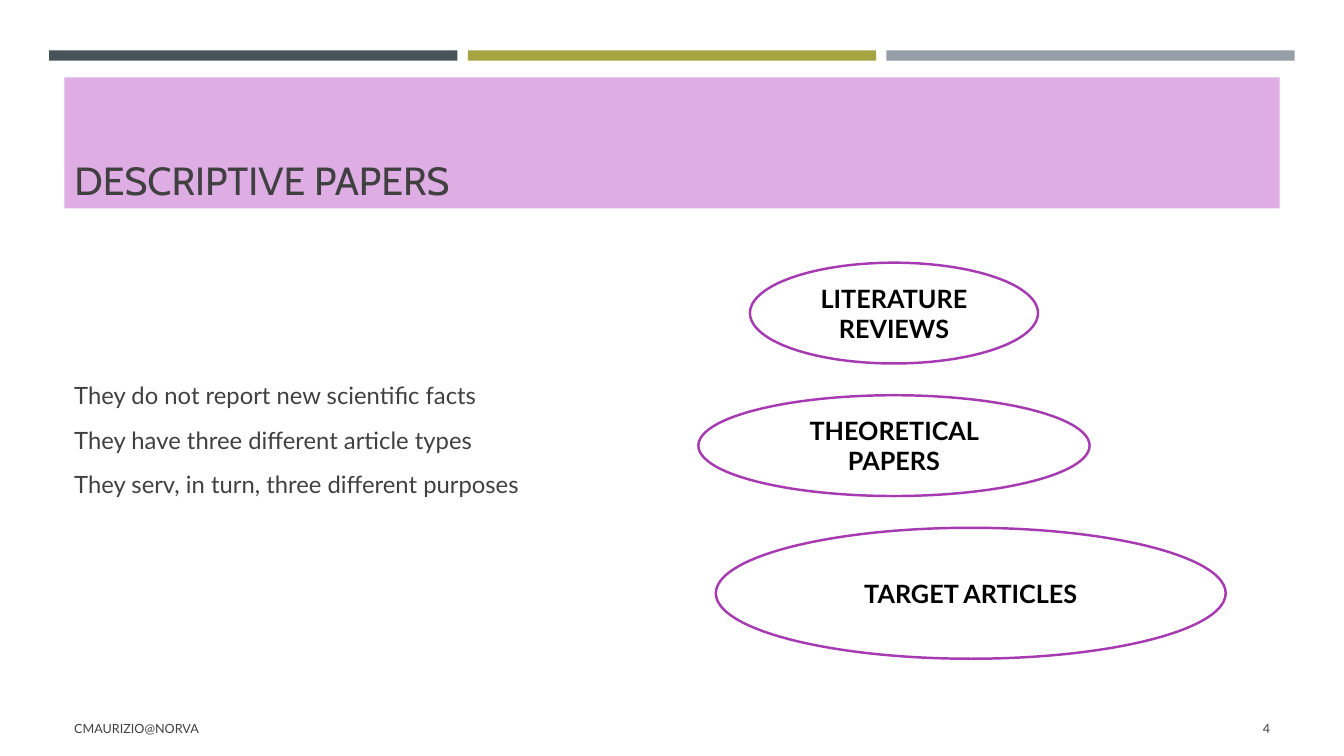
"""Build the slide that introduces descriptive papers and their three types."""
from pptx import Presentation
from pptx.dml.color import RGBColor
from pptx.enum.shapes import MSO_SHAPE
from pptx.enum.text import MSO_ANCHOR, MSO_AUTO_SIZE, PP_ALIGN
from pptx.util import Cm, Pt

SLATE = RGBColor(0x46, 0x53, 0x59)
OLIVE = RGBColor(0xA6, 0xA5, 0x41)
GREY = RGBColor(0x96, 0x9F, 0xA7)
LILAC = RGBColor(0xDE, 0xAD, 0xE4)
PURPLE = RGBColor(0xA6, 0x3B, 0xB1)
TEXT = RGBColor(0x40, 0x40, 0x40)
BLACK = RGBColor(0, 0, 0)
WHITE = RGBColor(0xFF, 0xFF, 0xFF)

MARGIN, CONTENT_W = 1.62, 30.63


def write(sp, lines, anchor, para, font, color):
    """Fill a shape with formatted paragraphs."""
    tf = sp.text_frame
    tf.word_wrap = True
    tf.auto_size = MSO_AUTO_SIZE.NONE
    tf.vertical_anchor = anchor
    tf.text = "\n".join(lines)
    for p in tf.paragraphs:
        for name, value in para.items():
            setattr(p, name, value)
        for r in p.runs:
            for name, value in font.items():
                setattr(r.font, name, value)
            r.font.color.rgb = color


def add_solid(kind, box, fill):
    """Add a plain filled shape without shadow or outline."""
    sp = s.shapes.add_shape(kind, *map(Cm, box))
    sp.shadow.inherit = False
    sp.fill.solid()
    sp.fill.fore_color.rgb = fill
    sp.line.fill.background()
    return sp


prs = Presentation()
prs.slide_width, prs.slide_height = Cm(33.87), Cm(19.05)
s = prs.slides.add_slide(prs.slide_layouts[5])

for i, color in enumerate((SLATE, OLIVE, GREY)):
    add_solid(MSO_SHAPE.RECTANGLE, (1.24 + i * 10.55, 1.27, 10.29, 0.26), color)

title = s.shapes.title
title.left, title.top, title.width, title.height = map(Cm, (MARGIN, 1.95, CONTENT_W, 3.3))
title.fill.solid()
title.fill.fore_color.rgb = LILAC
write(title, ["DESCRIPTIVE PAPERS"], MSO_ANCHOR.BOTTOM, {"alignment": PP_ALIGN.LEFT},
      {"name": "Cabin", "size": Pt(28)}, TEXT)

points = [
    "They do not report new scientific facts",
    "They have three different article types",
    "They serv, in turn, three different purposes",
]
body = s.shapes.add_textbox(*map(Cm, (MARGIN, 6.5, CONTENT_W, 9.08)))
write(body, points, MSO_ANCHOR.MIDDLE,
      {"line_spacing": 1.1, "space_before": Pt(3.4), "space_after": Pt(6)},
      {"name": "Lato", "size": Pt(17)}, TEXT)

footers = [
    ("CMAURIZIO@NORVA", MARGIN, 19.2, PP_ALIGN.LEFT),
    ("4", 29.34, 2.92, PP_ALIGN.RIGHT),
]
for text, left, width, align in footers:
    sp = s.shapes.add_textbox(*map(Cm, (left, 17.84, width, 1.02)))
    write(sp, [text], MSO_ANCHOR.MIDDLE, {"alignment": align},
          {"name": "Lato", "size": Pt(9)}, TEXT)

paper_types = [
    ("LITERATURE REVIEWS", (18.9, 6.62, 7.26, 2.54)),
    ("THEORETICAL PAPERS", (17.6, 9.96, 9.86, 2.54)),
    ("TARGET ARTICLES", (18.04, 13.3, 12.85, 3.3)),
]
for text, box in paper_types:
    sp = add_solid(MSO_SHAPE.OVAL, box, WHITE)
    sp.line.color.rgb = PURPLE
    sp.line.width = Pt(1.75)
    write(sp, [text], MSO_ANCHOR.MIDDLE, {"alignment": PP_ALIGN.CENTER},
          {"name": "Lato", "size": Pt(18), "bold": True}, BLACK)

prs.save("out.pptx")
